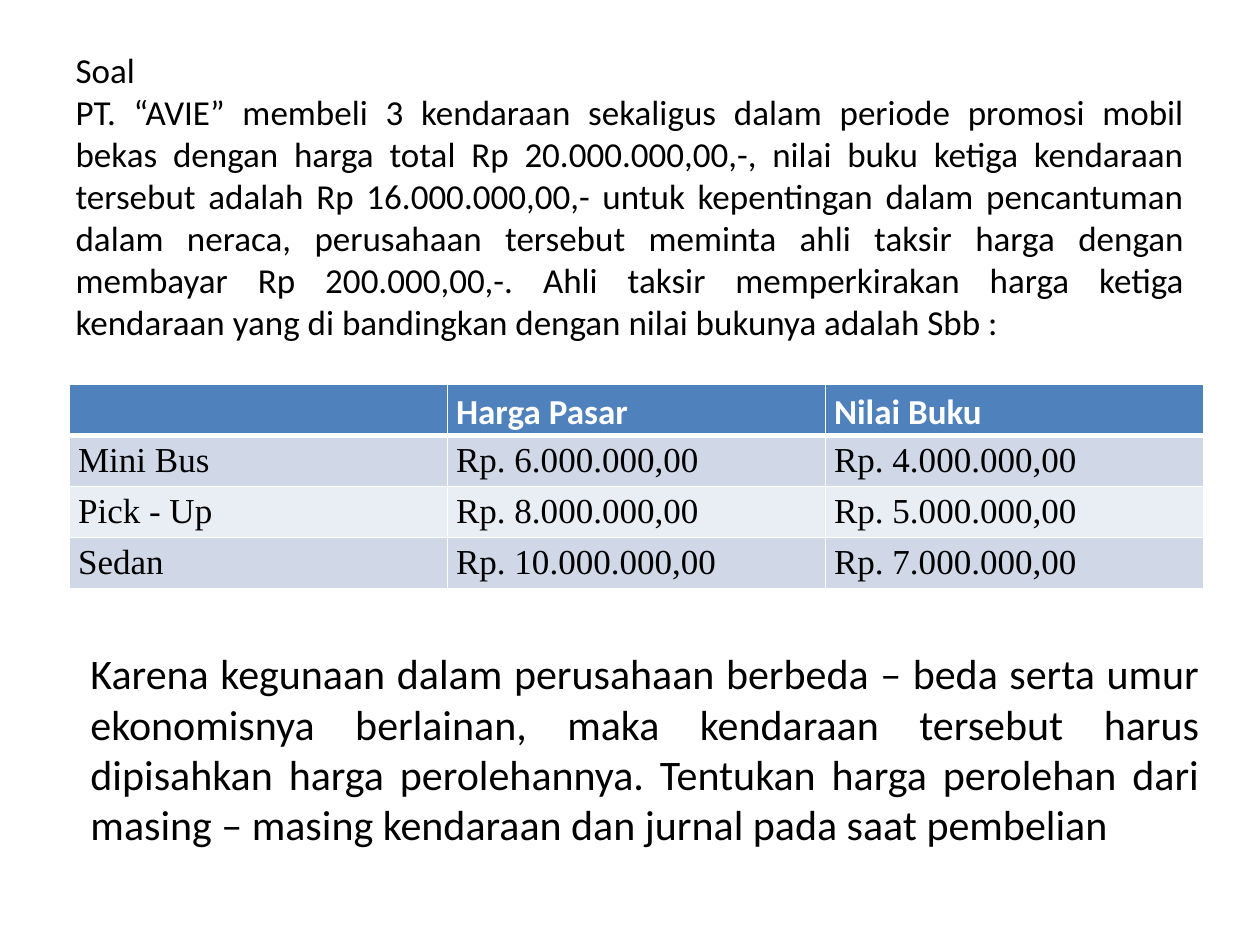
"""Build the vehicle purchase exercise slide."""
from pptx import Presentation
from pptx.dml.color import RGBColor
from pptx.enum.text import MSO_ANCHOR, PP_ALIGN
from pptx.oxml import parse_xml
from pptx.oxml.ns import nsdecls
from pptx.util import Inches, Pt

JUSTIFY, MIDDLE = PP_ALIGN.JUSTIFY, MSO_ANCHOR.MIDDLE
TITLE_ONLY = 5

QUESTION = (
    "Soal\n"
    "PT. “AVIE” membeli 3 kendaraan sekaligus dalam periode promosi mobil bekas "
    "dengan harga total Rp 20.000.000,00,-, nilai buku ketiga kendaraan tersebut "
    "adalah Rp 16.000.000,00,- untuk kepentingan dalam pencantuman dalam neraca, "
    "perusahaan tersebut meminta ahli taksir harga dengan membayar Rp 200.000,00,-. "
    "Ahli taksir memperkirakan harga ketiga kendaraan yang di bandingkan dengan "
    "nilai bukunya adalah Sbb :"
)
TASK = (
    "Karena kegunaan dalam perusahaan berbeda – beda serta umur ekonomisnya "
    "berlainan, maka kendaraan tersebut harus dipisahkan harga perolehannya. "
    "Tentukan harga perolehan dari masing – masing kendaraan dan jurnal pada "
    "saat pembelian"
)
PRICES = [
    ("", "Harga Pasar", "Nilai Buku"),
    ("Mini Bus", "Rp. 6.000.000,00", "Rp. 4.000.000,00"),
    ("Pick - Up", "Rp. 8.000.000,00", "Rp. 5.000.000,00"),
    ("Sedan", "Rp. 10.000.000,00", "Rp. 7.000.000,00"),
]
QUESTION_PLACE = (0.5, 0.3, 9, 2.51)
TABLE_PLACE = (0.55, 3.05, 9, 1.62)
TASK_PLACE = (0.62, 4.84, 9, 2.2)

HEADER_FILL, BAND_FILLS = "4F81BD", ("E9EDF4", "D0D8E8")
WHITE, BLACK = "FFFFFF", "000000"
HEADER_FONT = {"name": "Calibri", "size": Pt(20), "bold": True}
PRICE_FONT = {"name": "Times New Roman", "size": Pt(20), "bold": False}
QUESTION_FONT = {"name": "Calibri", "size": Pt(20)}
TASK_FONT = {"name": "Calibri", "size": Pt(24)}
CELL_FORMAT = {"margin_left": Inches(0.07), "margin_right": Inches(0.07),
               "margin_top": 0, "margin_bottom": 0}
FRAME_FORMAT = {"word_wrap": True, "vertical_anchor": MIDDLE}


def apply(target, values):
    for name, value in values.items():
        setattr(target, name, value)


def color(hex_code):
    return RGBColor.from_string(hex_code)


def inches(place):
    return [Inches(length) for length in place]


def write(frame, text, font, hex_code):
    para = frame.paragraphs[0]
    para.text = text
    para.alignment = JUSTIFY
    for span in para.runs:
        apply(span.font, font)
        span.font.color.rgb = color(hex_code)
    return para


def add_borders(cell, bottom):
    properties = cell._tc.get_or_add_tcPr()
    for side, points in (("L", 1), ("R", 1), ("T", 1), ("B", bottom)):
        properties.append(parse_xml(
            f'<a:ln{side} {nsdecls("a")} w="{Pt(points)}"><a:solidFill>'
            f'<a:srgbClr val="{WHITE}"/></a:solidFill></a:ln{side}>'))


def add_prices(page):
    table = page.shapes.add_table(
        len(PRICES), len(PRICES[0]), *inches(TABLE_PLACE)).table
    for row, texts in enumerate(PRICES):
        header = row == 0
        for column, text in enumerate(texts):
            cell = table.cell(row, column)
            apply(cell, CELL_FORMAT)
            add_borders(cell, 3 if header else 1)
            cell.fill.solid()
            cell.fill.fore_color.rgb = color(HEADER_FILL if header else BAND_FILLS[row % 2])
            para = write(cell.text_frame, text, HEADER_FONT if header else PRICE_FONT,
                         WHITE if header else BLACK)
            para.line_spacing = 1.15


def main():
    deck = Presentation()
    deck.slide_width, deck.slide_height = Inches(10), Inches(7.5)
    page = deck.slides.add_slide(deck.slide_layouts[TITLE_ONLY])

    title = page.shapes.title
    apply(title, dict(zip(("left", "top", "width", "height"), inches(QUESTION_PLACE))))
    apply(title.text_frame, FRAME_FORMAT)
    write(title.text_frame, QUESTION, QUESTION_FONT, BLACK)

    add_prices(page)

    task = page.shapes.add_textbox(*inches(TASK_PLACE))
    apply(task.text_frame, FRAME_FORMAT)
    write(task.text_frame, TASK, TASK_FONT, BLACK)

    deck.save("out.pptx")


if __name__ == "__main__":
    main()
